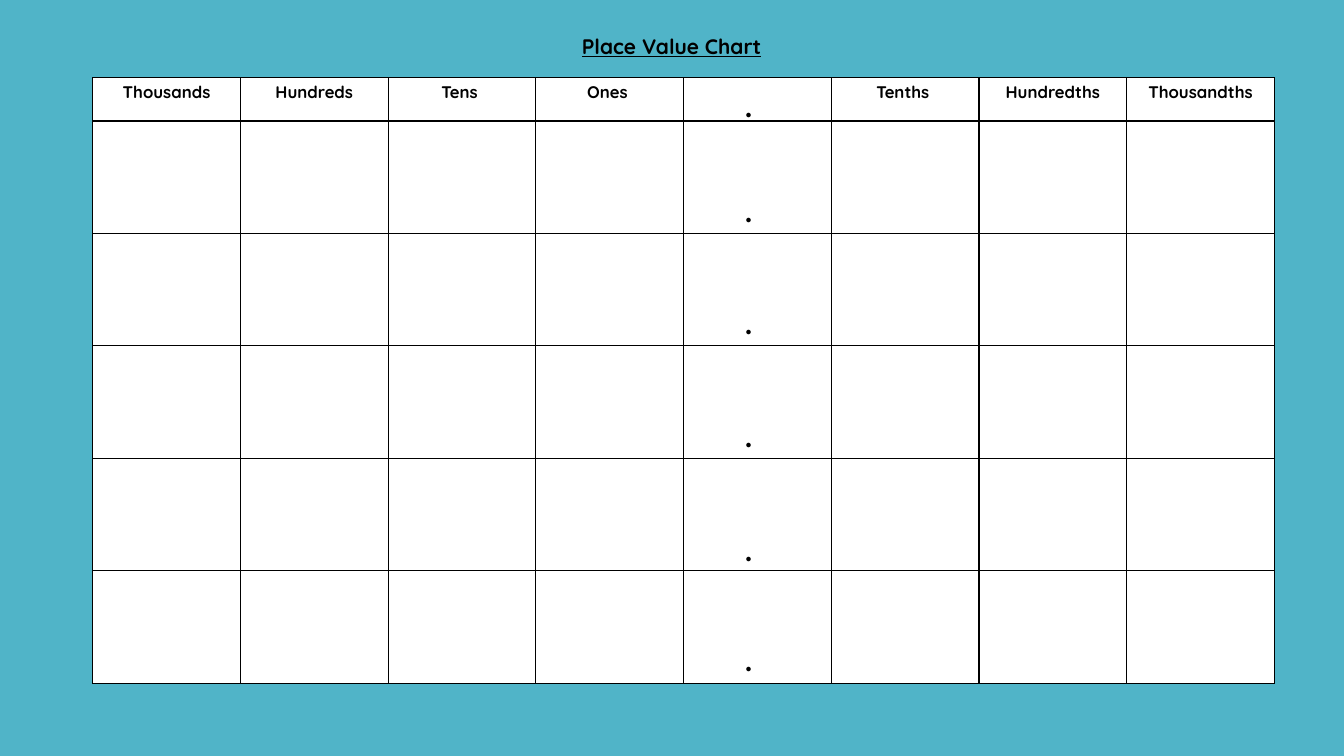
import pptx
import pptx.dml.color
import pptx.enum.text
import pptx.oxml
import pptx.oxml.ns
import pptx.util
from pptx.util import Inches

TEAL = pptx.dml.color.RGBColor(0x50, 0xB4, 0xC8)
WHITE = pptx.dml.color.RGBColor(0xFF, 0xFF, 0xFF)
BLACK = pptx.dml.color.RGBColor(0x00, 0x00, 0x00)

HEADINGS = ["Thousands", "Hundreds", "Tens ", "Ones ", "",
            "Tenths ", "Hundredths", "Thousandths"]
ROWS = 6
TABLE_WIDTH, TABLE_HEIGHT, HEADER_HEIGHT = 11.72, 6.01, 0.43
POINT_TOPS = [0.74, 1.78, 2.89, 4.02, 5.15, 6.24]


def style_text(paragraph, font_name, size, bold=False):
    paragraph.font.name = font_name
    paragraph.font.size = pptx.util.Pt(size)
    paragraph.font.bold = bold
    paragraph.font.color.rgb = BLACK


def add_borders(cell):
    properties = cell._tc.get_or_add_tcPr()
    for side in ("lnL", "lnR", "lnT", "lnB"):
        properties.append(pptx.oxml.parse_xml(
            f'<a:{side} {pptx.oxml.ns.nsdecls("a")} w="{pptx.util.Pt(1)}">'
            f'<a:solidFill><a:srgbClr val="{BLACK}"/></a:solidFill></a:{side}>'))


# Slide and background
deck = pptx.Presentation()
deck.slide_width = Inches(13.33)
deck.slide_height = Inches(7.5)
slide = deck.slides.add_slide(deck.slide_layouts[5])
slide.background.fill.solid()
slide.background.fill.fore_color.rgb = TEAL

# Title
title = slide.shapes.title
title.left, title.top = Inches(5.67), Inches(0.28)
title.width, title.height = Inches(2.27), Inches(0.35)
title.text_frame.text = "Place Value Chart"
title.text_frame.auto_size = pptx.enum.text.MSO_AUTO_SIZE.NONE
title.text_frame.vertical_anchor = pptx.enum.text.MSO_ANCHOR.TOP
title_para = title.text_frame.paragraphs[0]
title_para.alignment = pptx.enum.text.PP_ALIGN.LEFT
style_text(title_para, "Quicksand", 15, bold=True)
title_para.font.underline = True

# Place value table
table = slide.shapes.add_table(
    ROWS, len(HEADINGS), Inches(0.92), Inches(0.77),
    Inches(TABLE_WIDTH), Inches(TABLE_HEIGHT)).table
table.first_row = False
table.horz_banding = False
for row in table.rows:
    row.height = Inches((TABLE_HEIGHT - HEADER_HEIGHT) / (ROWS - 1))
table.rows[0].height = Inches(HEADER_HEIGHT)

for cell in table.iter_cells():
    add_borders(cell)
    cell.fill.solid()
    cell.fill.fore_color.rgb = WHITE
    cell.margin_left = cell.margin_right = Inches(0.07)
    cell.margin_top = cell.margin_bottom = Inches(0.04)

for column, heading in enumerate(HEADINGS):
    if heading:
        cell = table.cell(0, column)
        cell.text = heading
        para = cell.text_frame.paragraphs[0]
        para.alignment = pptx.enum.text.PP_ALIGN.CENTER
        style_text(para, "Quicksand", 12, bold=True)

# Decimal points, one per row
for top in POINT_TOPS:
    box = slide.shapes.add_textbox(
        Inches(7.28), Inches(top), Inches(0.37), Inches(0.56))
    box.text_frame.word_wrap = True
    box.text_frame.text = "."
    style_text(box.text_frame.paragraphs[0], "Calibri", 27)

deck.save("out.pptx")
